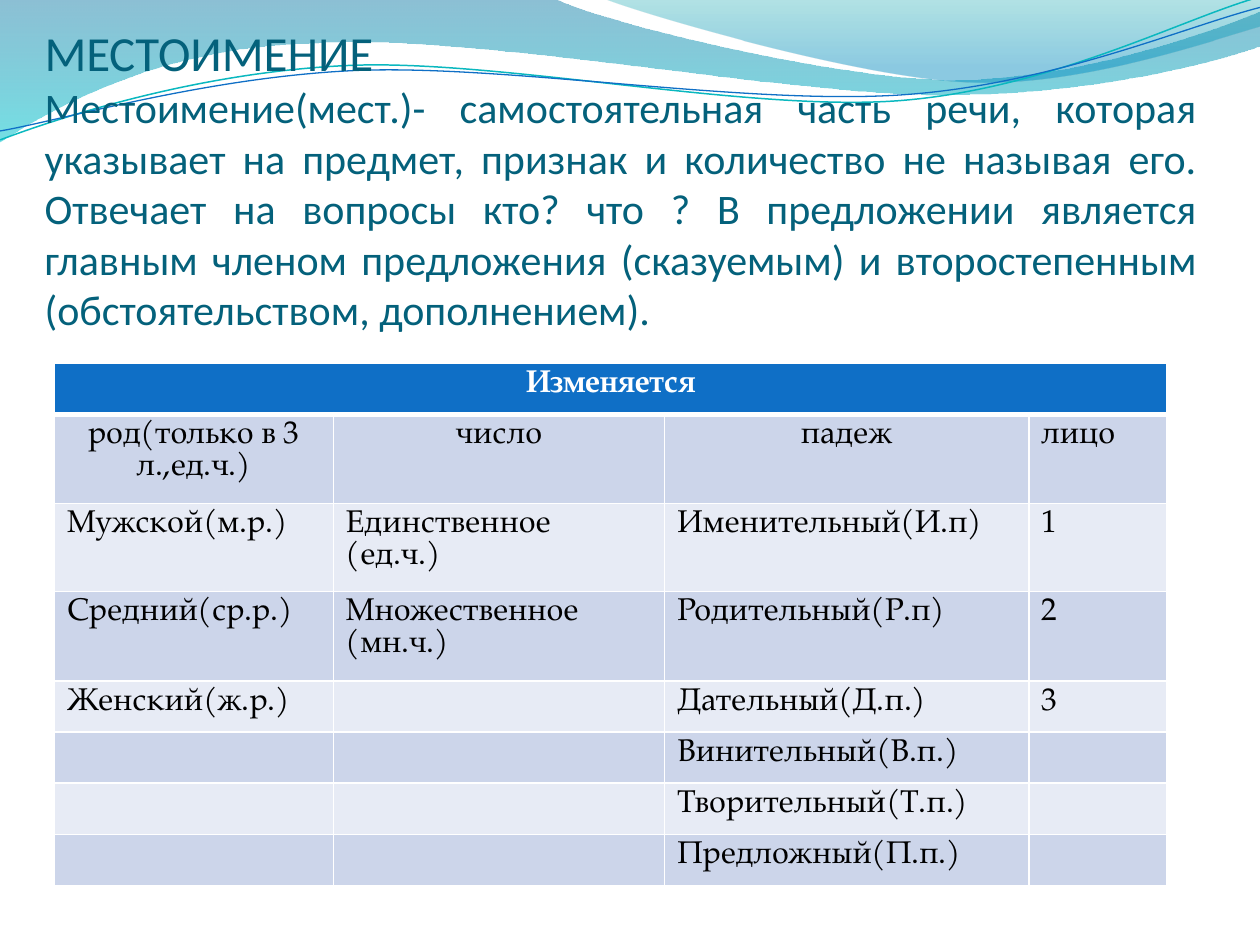
import math

from lxml import etree
from pptx import Presentation
from pptx import util as u
from pptx.dml.color import RGBColor
from pptx.enum import text
from pptx.oxml import ns

WHITE = RGBColor(0xFF, 0xFF, 0xFF)
BLACK = RGBColor(0, 0, 0)
DEEP_TEAL = RGBColor(0x04, 0x61, 0x7B)
BLUE = RGBColor(0x0F, 0x6F, 0xC6)
AQUA = RGBColor(0x0A, 0xB8, 0xBF)
OCEAN = RGBColor(0x00, 0x74, 0xA1)
TURQUOISE = RGBColor(0x00, 0xC6, 0xCF)
LAGOON = RGBColor(0x00, 0xA1, 0xA9)
SKY = RGBColor(0x00, 0x8B, 0xBF)
BAND_DARK = RGBColor(0xCC, 0xD5, 0xEA)
BAND_LIGHT = RGBColor(0xE7, 0xEB, 0xF5)

WAVES = [
    ((0, 0), [
        [(11.18, -0.03)],
        [(12.09, 0.43), (16.87, 1.6), (19.25, 1.6)],
        [(21.67, 1.6), (24.33, 0.66), (25.4, 0.23)],
        [(25.43, 0.91)],
        [(24.97, 1.12), (22.1, 1.93), (18.95, 1.91)],
        [(15.8, 1.91), (9.7, 0.71), (6.53, 0.86)],
        [(3.28, 0.91), (1.17, 2.11), (-0.03, 2.87)],
    ], [(0, OCEAN, 45), (1, TURQUOISE, 55)]),
    ((12.17, -0.03), [
        [(12.93, 0.28), (17.32, 1.57), (19.53, 1.65)],
        [(21.74, 1.75), (24.41, 0.81), (25.4, 0.53)],
        [(25.4, 0)],
    ], [(0, LAGOON, 30), (0.8, SKY, 45)]),
]

RIPPLE_TILT = -2.7
RIPPLE_PIVOT = (12.68, 1.48)
RIPPLES = [
    ((0, 2.82), [
        [(1.22, 2.36), (4.01, 1.45), (7.04, 1.32)],
        [(10.03, 1.19), (15.06, 2.26), (18.11, 2.03)],
        [(21.16, 1.8), (23.83, 0.38), (25.35, -0.05)],
    ], AQUA, 0.85),
    ((0, 2.64), [
        [(1.19, 2.44), (4.17, 1.55), (7.19, 1.42)],
        [(10.24, 1.3), (15.06, 2.13), (18.21, 1.91)],
        [(21.23, 1.7), (23.9, 0.53), (25.4, 0.15)],
    ], BLUE, 0.75),
]

HEADING = "МЕСТОИМЕНИЕ"
DEFINITION = (
    "Местоимение(мест.)- самостоятельная часть речи, которая указывает на предмет, "
    "признак и количество не называя его. Отвечает на вопросы кто? что ? "
    "В предложении является главным членом предложения (сказуемым) "
    "и второстепенным (обстоятельством, дополнением)."
)

COLUMN_WIDTHS = [5.62, 6.68, 7.34, 2.79]
ROW_HEIGHTS = [1.03, 1.8, 1.03, 1.8, 1.03, 1.03, 1.03, 1.03]
FORMS = [
    ["Изменяется", "", "", ""],
    ["род(только в 3 л.,ед.ч.)", "число", "падеж", "лицо"],
    ["Мужской(м.р.)", "Единственное\n(ед.ч.)", "Именительный(И.п)", "1"],
    ["Средний(ср.р.)", "Множественное\n(мн.ч.)", "Родительный(Р.п)", "2"],
    ["Женский(ж.р.)", "", "Дательный(Д.п.)", "3"],
    ["", "", "Винительный(В.п.)", ""],
    ["", "", "Творительный(Т.п.)", ""],
    ["", "", "Предложный(П.п.)", ""],
]


def level(point):
    angle = math.radians(-RIPPLE_TILT)
    dx, dy = (value - pivot for value, pivot in zip(point, RIPPLE_PIVOT))
    return (RIPPLE_PIVOT[0] + dx * math.cos(angle) - dy * math.sin(angle),
            RIPPLE_PIVOT[1] + dx * math.sin(angle) + dy * math.cos(angle))


def add_outline(slide, left, top, start, segments, close):
    def place(point):
        return u.Cm(left + point[0]), u.Cm(top + point[1])

    builder = slide.shapes.build_freeform(*place(start))
    builder.add_line_segments([place(segment[-1]) for segment in segments], close=close)
    outline = builder.convert_to_shape()
    outline.shadow.inherit = False
    stretches = list(outline.element.spPr.iter(ns.qn("a:lnTo")))
    for stretch, segment in zip(stretches, segments):
        if len(segment) == 1:
            continue
        curve = etree.Element(ns.qn("a:cubicBezTo"))
        for x, y in map(place, segment):
            etree.SubElement(curve, ns.qn("a:pt"),
                             x=str(x - outline.left), y=str(y - outline.top))
        stretch.getparent().replace(stretch, curve)
    return outline


def add_banner(slide, left, top):
    for start, segments, stops in WAVES:
        wave = add_outline(slide, left, top, start, segments, True)
        wave.line.fill.background()
        wave.fill.gradient()
        wave.fill.gradient_angle = 270
        for stop, (position, color, _) in zip(wave.fill.gradient_stops, stops):
            stop.position = position
            stop.color.rgb = color
        for tint, (_, _, opacity) in zip(wave.element.spPr.iter(ns.qn("a:srgbClr")), stops):
            etree.SubElement(tint, ns.qn("a:alpha"), val=str(opacity * 1000))
    for start, segments, color, width in RIPPLES:
        leveled = [[level(point) for point in segment] for segment in segments]
        ripple = add_outline(slide, left, top, level(start), leveled, False)
        ripple.rotation = RIPPLE_TILT
        ripple.fill.background()
        ripple.line.color.rgb = color
        ripple.line.width = u.Pt(width)


def add_definition(slide, left, top, width, height):
    frame = slide.shapes.add_textbox(
        u.Cm(left), u.Cm(top), u.Cm(width), u.Cm(height)).text_frame
    frame.word_wrap = True
    frame.vertical_anchor = text.MSO_ANCHOR.BOTTOM
    frame.margin_left = frame.margin_right = frame.margin_bottom = 0
    paragraph = frame.paragraphs[0]
    paragraph.text = f"{HEADING}\v{DEFINITION}"
    paragraph.alignment = text.PP_ALIGN.JUSTIFY
    paragraph.font.name = "Calibri"
    paragraph.font.color.rgb = DEEP_TEAL
    for run, size in zip(paragraph.runs, (28, 24)):
        run.font.size = u.Pt(size)


def add_borders(cell, top_width, bottom_width):
    properties = cell._tc.get_or_add_tcPr()
    for side, width in (("L", 1), ("R", 1), ("T", top_width), ("B", bottom_width)):
        border = etree.SubElement(properties, ns.qn(f"a:ln{side}"), w=str(u.Pt(width)))
        solid = etree.SubElement(border, ns.qn("a:solidFill"))
        etree.SubElement(solid, ns.qn("a:srgbClr"), val=str(WHITE))


def add_forms_table(slide, left, top):
    table = slide.shapes.add_table(
        len(FORMS), len(COLUMN_WIDTHS), u.Cm(left), u.Cm(top),
        u.Cm(sum(COLUMN_WIDTHS)), u.Cm(sum(ROW_HEIGHTS))).table
    for column, width in zip(table.columns, COLUMN_WIDTHS):
        column.width = u.Cm(width)
    for row, height in zip(table.rows, ROW_HEIGHTS):
        row.height = u.Cm(height)
    table.cell(0, 0).merge(table.cell(0, len(COLUMN_WIDTHS) - 1))
    for r, forms in enumerate(FORMS):
        header = r == 0
        for c, form in enumerate(forms):
            cell = table.cell(r, c)
            add_borders(cell, 3 if r == 1 else 1, 3 if header else 1)
            cell.fill.solid()
            cell.fill.fore_color.rgb = BLUE if header else (BAND_LIGHT, BAND_DARK)[r % 2]
            cell.text = form
            for paragraph in cell.text_frame.paragraphs:
                if r < 2 and c < 3:
                    paragraph.alignment = text.PP_ALIGN.CENTER
                paragraph.font.name = "TeX Gyre Pagella"
                paragraph.font.size = u.Pt(18)
                paragraph.font.bold = header
                paragraph.font.color.rgb = WHITE if header else BLACK


def main():
    deck = Presentation()
    deck.slide_width, deck.slide_height = u.Cm(25.4), u.Cm(19.05)
    slide = deck.slides.add_slide(deck.slide_layouts[6])
    add_banner(slide, 0, 0)
    add_definition(slide, 0.9, 0.76, 23.23, 5.97)
    add_forms_table(slide, 1.1, 7.32)
    deck.save("out.pptx")


if __name__ == "__main__":
    main()
